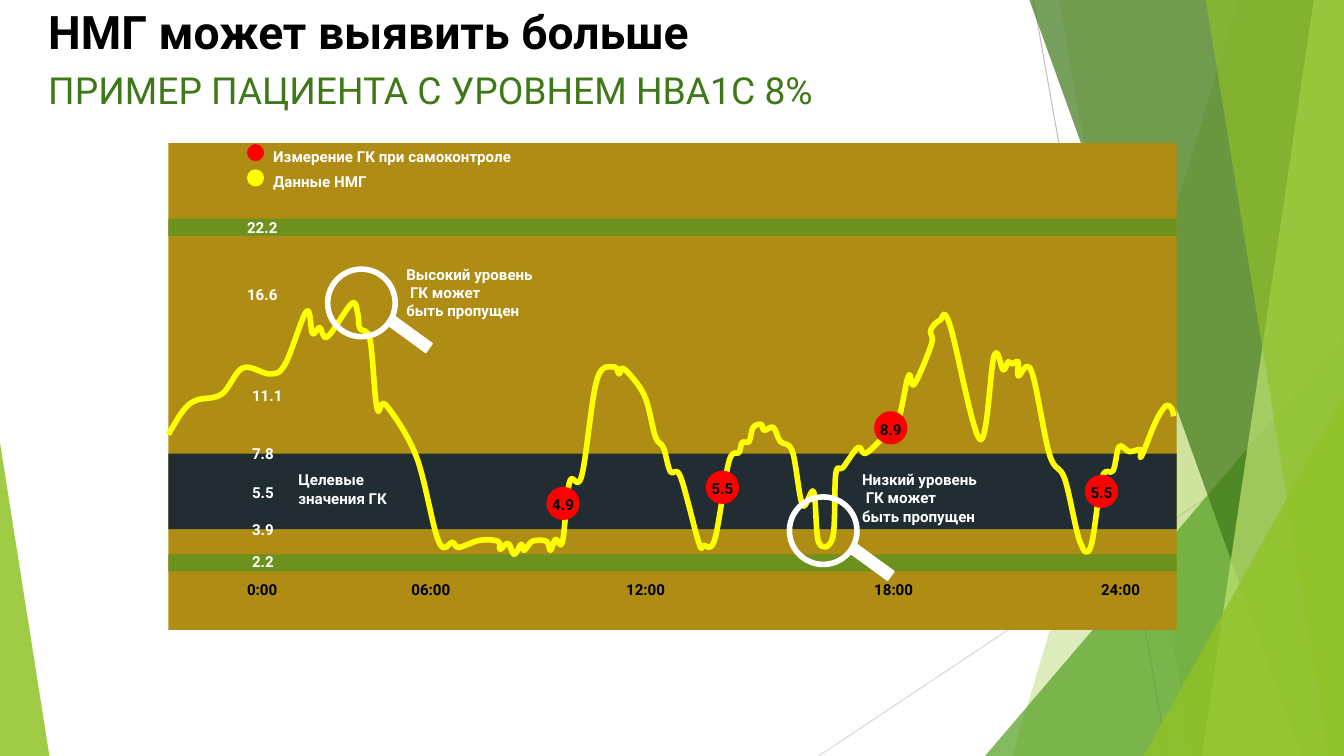
"""Build the slide on what continuous glucose monitoring can reveal."""
from dataclasses import dataclass

from lxml import etree
from pptx import Presentation
from pptx.dml.color import RGBColor
from pptx.enum.shapes import MSO_CONNECTOR, MSO_SHAPE
from pptx.enum.text import MSO_ANCHOR, PP_ALIGN
from pptx.oxml.ns import qn
from pptx.util import Inches, Pt

RECTANGLE, OVAL = MSO_SHAPE.RECTANGLE, MSO_SHAPE.OVAL
TRIANGLE, STRAIGHT = MSO_SHAPE.ISOSCELES_TRIANGLE, MSO_CONNECTOR.STRAIGHT
TOP, MIDDLE = MSO_ANCHOR.TOP, MSO_ANCHOR.MIDDLE
LEFT, CENTER = PP_ALIGN.LEFT, PP_ALIGN.CENTER

WHITE, BLACK = RGBColor(0xFF, 0xFF, 0xFF), RGBColor(0x00, 0x00, 0x00)
RED, YELLOW = RGBColor(0xFF, 0x00, 0x00), RGBColor(0xFF, 0xFF, 0x00)
OCHRE, SLATE = RGBColor(0xAF, 0x8C, 0x14), RGBColor(0x21, 0x2D, 0x32)
OLIVE, LIME = RGBColor(0x6C, 0x92, 0x1D), RGBColor(0x90, 0xC2, 0x26)
GRASS, FOREST = RGBColor(0x54, 0xA0, 0x21), RGBColor(0x3F, 0x78, 0x19)
PALE_LIME = RGBColor(0xC0, 0xE4, 0x74)
GREY, LIGHT_GREY = RGBColor(0xBF, 0xBF, 0xBF), RGBColor(0xD9, 0xD9, 0xD9)

PAGE_WIDTH, PAGE_HEIGHT = 13.33, 7.5
CHART_LEFT, CHART_WIDTH = 1.67, 10
MARKER_SIZE, LEGEND_SIZE, LENS_SIZE = 0.33, 0.17, 0.67
LABEL_FONT = {"name": "Roboto", "size": Pt(10.8), "bold": True}
TITLE_FONT = {"name": "Roboto", "size": Pt(33), "bold": True}
SUBTITLE_FONT = {"name": "Roboto", "size": Pt(26.65), "bold": False}


@dataclass
class Facet:
    left_top: float
    left_bottom: float
    color: RGBColor
    opacity: int
    top: float = 0
    right: float = PAGE_WIDTH
    peak: float | None = None


@dataclass
class Label:
    left: float
    top: float
    lines: tuple[str, ...]
    color: RGBColor = WHITE
    spacing: Pt | None = Pt(19)
    anchor: int = TOP
    width: float = 0.45
    height: float = 0.33


FACETS = [
    Facet(12.28, 10.04, LIME, 30),
    Facet(10.5, 11.83, LIME, 20),
    Facet(9.77, 9.77, GRASS, 72, top=3.33, peak=1),
    Facet(10.21, 12.91, FOREST, 70),
    Facet(13.03, 11.92, PALE_LIME, 70),
    Facet(11.96, 13.18, LIME, 65),
    Facet(11.34, 11.34, LIME, 80, top=3.93, peak=1),
    Facet(0, 0, LIME, 85, top=4.39, right=0.49, peak=0),
]
RAYS = [(10.25, 0, 11.58, PAGE_HEIGHT, GREY), (PAGE_WIDTH, 4.03, 8.12, PAGE_HEIGHT, LIGHT_GREY)]
BANDS = [(1.42, 4.83, OCHRE), (4.5, 0.75, SLATE), (5.5, 0.17, OLIVE), (2.17, 0.17, OLIVE)]
READINGS = [(5.42, 4.83, "4.9"), (7, 4.67, "5.5"), (8.67, 4.08, "8.9"), (10.76, 4.71, "5.5")]
HOURS = [(2.45, "0:00"), (4.08, "06:00"), (6.21, "12:00"), (8.67, "18:00"), (10.92, "24:00")]
LEVELS = [(2.45, 2.08, "22.2"), (2.45, 2.75, "16.6"), (2.5, 3.75, "11.1"), (2.5, 4.33, "7.8"),
          (2.5, 4.71, "5.5"), (2.5, 5.08, "3.9"), (2.5, 5.4, "2.2")]
LEGEND = [(1.42, RED, "Измерение ГК при самоконтроле"), (1.67, YELLOW, "Данные НМГ")]
NOTES = [(4.03, 2.63, ("Высокий уровень", " ГК может", "быть пропущен")),
         (8.55, 4.67, ("Низкий уровень", " ГК может", "быть пропущен")),
         (2.96, 4.67, ("Целевые", "значения ГК"))]
LENSES = [(3.25, 2.67), (7.83, 4.93)]
GLUCOSE = [
    (1.67, 4.31), (1.82, 4.07), (1.95, 3.97), (2.2, 3.91), (2.41, 3.65), (2.68, 3.71), (2.83, 3.61),
    (3.04, 3.09), (3.1, 3.31), (3.17, 3.25), (3.25, 3.34), (3.49, 3.01), (3.55, 3.12), (3.57, 3.26),
    (3.67, 3.37), (3.74, 4.05), (3.83, 4.02), (4.13, 4.53), (4.35, 5.37), (4.49, 5.38), (4.55, 5.43),
    (4.76, 5.36), (4.94, 5.37), (4.96, 5.45), (5.04, 5.39), (5.1, 5.5), (5.17, 5.4), (5.2, 5.46),
    (5.28, 5.37), (5.42, 5.37), (5.46, 5.46), (5.51, 5.35), (5.58, 5.37), (5.65, 4.78), (5.77, 4.72),
    (5.92, 3.77), (6.09, 3.64), (6.14, 3.71), (6.19, 3.66), (6.39, 3.92), (6.5, 4.33), (6.58, 4.44),
    (6.65, 4.68), (6.75, 4.73), (6.93, 5.38), (6.98, 5.41), (7.09, 5.35), (7.23, 4.58), (7.33, 4.49),
    (7.36, 4.39), (7.43, 4.38), (7.47, 4.24), (7.55, 4.21), (7.58, 4.27), (7.67, 4.24), (7.74, 4.38),
    (7.86, 4.48), (7.96, 5.01), (8.07, 4.88), (8.12, 5.38), (8.26, 5.33), (8.29, 4.7), (8.36, 4.64),
    (8.51, 4.44), (8.58, 4.5), (8.72, 4.38), (8.9, 4.19), (9.01, 3.73), (9.07, 3.81), (9.24, 3.41),
    (9.23, 3.28), (9.32, 3.18), (9.42, 3.22), (9.72, 4.36), (9.86, 3.53), (9.95, 3.67), (10, 3.59),
    (10.04, 3.61), (10.1, 3.59), (10.1, 3.73), (10.23, 3.68), (10.41, 4.51), (10.56, 4.75),
    (10.71, 5.37), (10.82, 5.42), (10.93, 4.74), (11.04, 4.67), (11.1, 4.43), (11.2, 4.48),
    (11.31, 4.46), (11.32, 4.53), (11.46, 4.19), (11.56, 4.03), (11.62, 4.05), (11.64, 4.13),
]


def apply_format(target, values: dict) -> None:
    for name, value in values.items():
        setattr(target, name, value)


def paint(shape, fill: RGBColor | None, line: RGBColor | None = None, width: float = 1) -> None:
    for part, color in ((shape.fill, fill), (shape.line.fill, line)):
        if color is None:
            part.background()
        else:
            part.solid()
            part.fore_color.rgb = color
    if line is not None:
        shape.line.width = Pt(width)
    shape.shadow.inherit = False


def add_preset(page, kind, left: float, top: float, width: float, height: float,
               fill: RGBColor | None, line: RGBColor | None = None, line_width: float = 1):
    shape = page.shapes.add_shape(kind, *map(Inches, (left, top, width, height)))
    paint(shape, fill, line, line_width)
    return shape


def write(shape, lines: tuple[str, ...], font: dict, color: RGBColor, anchor: int,
          margins: tuple[float, float], paragraph: dict) -> None:
    side, top = map(Inches, margins)
    box = shape.text_frame
    apply_format(box, {"word_wrap": True, "vertical_anchor": anchor, "margin_left": side,
                       "margin_right": side, "margin_top": top, "margin_bottom": 0})
    for index, line in enumerate(lines):
        para = box.add_paragraph() if index else box.paragraphs[0]
        apply_format(para, paragraph)
        span = para.add_run()
        span.text = line
        apply_format(span.font, font)
        span.font.color.rgb = color


def add_label(page, label: Label, font: dict = LABEL_FONT,
              margins: tuple[float, float] = (0, 0)) -> None:
    frame = (label.left, label.top, label.width, label.height)
    shape = page.shapes.add_textbox(*map(Inches, frame))
    write(shape, label.lines, font, label.color, label.anchor, margins,
          {"alignment": LEFT, "line_spacing": label.spacing})


def add_outline(page, points: list[tuple[float, float]], close: bool):
    corners = [(Inches(x), Inches(y)) for x, y in points]
    builder = page.shapes.build_freeform(*corners[0])
    builder.add_line_segments(corners[1:], close=close)
    return builder.convert_to_shape()


def add_facet(page, facet: Facet) -> None:
    if facet.peak is None:
        shape = add_outline(page, [(facet.left_top, 0), (PAGE_WIDTH, 0), (PAGE_WIDTH, PAGE_HEIGHT),
                                   (facet.left_bottom, PAGE_HEIGHT)], True)
        paint(shape, facet.color)
    else:
        shape = add_preset(page, TRIANGLE, facet.left_top, facet.top, facet.right - facet.left_top,
                           PAGE_HEIGHT - facet.top, facet.color)
        shape.adjustments[0] = facet.peak
    color = shape.element.spPr.find(qn("a:solidFill"))[0]
    etree.SubElement(color, qn("a:alpha"), val=str(facet.opacity * 1000))


def add_smooth_curve(page, knots: list[tuple[float, float]]) -> None:
    shape = add_outline(page, knots, False)
    paint(shape, None, YELLOW, 4)
    outline = next(shape.element.iter(qn("a:path")))
    spots = [(int(spot.get("x")), int(spot.get("y"))) for spot in outline.iter(qn("a:pt"))]
    padded = [spots[0], *spots, spots[-1]]
    for segment in outline.findall(qn("a:lnTo")):
        outline.remove(segment)
    for before, start, end, after in zip(padded, padded[1:], padded[2:], padded[3:]):
        first = [s + (e - b) / 6 for b, s, e in zip(before, start, end)]
        second = [e - (a - s) / 6 for s, e, a in zip(start, end, after)]
        bezier = etree.SubElement(outline, qn("a:cubicBezTo"))
        for x, y in (first, second, end):
            etree.SubElement(bezier, qn("a:pt"), x=str(round(x)), y=str(round(y)))


deck = Presentation()
deck.slide_width, deck.slide_height = Inches(PAGE_WIDTH), Inches(PAGE_HEIGHT)
page = deck.slides.add_slide(deck.slide_layouts[6])
for *ends, color in RAYS:
    ray = page.shapes.add_connector(STRAIGHT, *map(Inches, ends))
    apply_format(ray.line, {"width": Pt(0.75)})
    ray.line.color.rgb = color
    etree.SubElement(ray.element.spPr, qn("a:effectLst"))
for facet in FACETS:
    add_facet(page, facet)
for top, height, color in BANDS:
    add_preset(page, RECTANGLE, CHART_LEFT, top, CHART_WIDTH, height, color)
add_smooth_curve(page, GLUCOSE)
for left, top, value in READINGS:
    marker = add_preset(page, OVAL, left, top, MARKER_SIZE, MARKER_SIZE, RED)
    write(marker, (value,), LABEL_FONT, BLACK, MIDDLE, (0, 0.03), {"alignment": CENTER})
for left, top, color, text in [(x, 5.67, BLACK, t) for x, t in HOURS] + [(x, y, WHITE, t) for x, y, t in LEVELS]:
    add_label(page, Label(left, top, (text,), color))
for top, color, text in LEGEND:
    add_preset(page, OVAL, 2.45, top + 0.01, LEGEND_SIZE, LEGEND_SIZE, color)
    add_label(page, Label(2.71, top, (text,), anchor=MIDDLE, width=2.8, height=0.18))
for left, top in LENSES:
    add_preset(page, OVAL, left, top, LENS_SIZE, LENS_SIZE, None, WHITE, 4)
    add_preset(page, RECTANGLE, left + 0.58, top + 0.59, 0.47, 0.11, WHITE, WHITE).rotation = 36.1
for left, top, lines in NOTES:
    add_label(page, Label(left, top, lines, spacing=None, width=1.5, height=0.19 * len(lines)))
title = Label(0.38, 0, ("НМГ может выявить больше",), BLACK, None, width=9.38, height=0.6)
subtitle = Label(0.38, 0.79, ("ПРИМЕР ПАЦИЕНТА С УРОВНЕМ HBA1C 8%",), FOREST, Pt(19.6), width=9.38)
add_label(page, title, TITLE_FONT, (0.1, 0.03))
add_label(page, subtitle, SUBTITLE_FONT, (0.1, 0.05))
deck.save("out.pptx")
